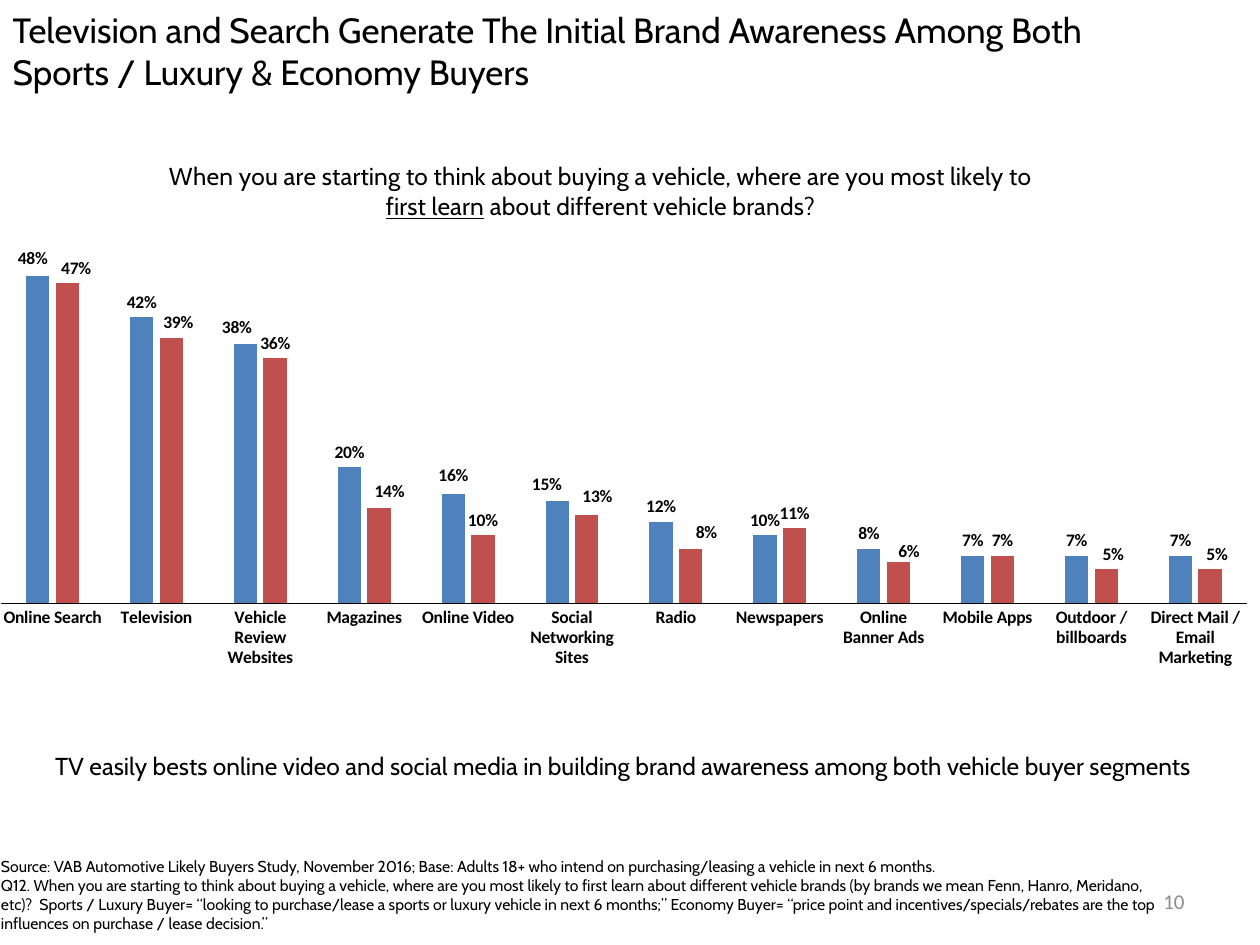
import pptx
import pptx.chart.data
import pptx.dml.color
import pptx.enum.chart
import pptx.enum.text
import pptx.oxml
import pptx.oxml.ns
import pptx.util

Pt = pptx.util.Pt
ALIGN = pptx.enum.text.PP_ALIGN
ANCHOR = pptx.enum.text.MSO_ANCHOR
COLORS = {"text": "000000", "number": "8C8C8C", "luxury": "4F81BD", "economy": "C0504D"}

CATEGORIES = ["Online Search", "Television", "Vehicle Review Websites", "Magazines",
              "Online Video", "Social Networking Sites", "Radio", "Newspapers",
              "Online Banner Ads", "Mobile Apps", "Outdoor / billboards",
              "Direct Mail / Email Marketing"]
LUXURY = [0.48, 0.42, 0.38, 0.20, 0.16, 0.15, 0.12, 0.10, 0.08, 0.07, 0.07, 0.07]
ECONOMY = [0.47, 0.39, 0.36, 0.14, 0.10, 0.13, 0.08, 0.11, 0.06, 0.07, 0.05, 0.05]

# Shifts of single value labels in points: point index -> (right, down)
LUXURY_SHIFTS = {0: (-3, -2), 2: (-5, -1), 4: (0, -2), 5: (-6, -1)}
ECONOMY_SHIFTS = {0: (5, 0), 1: (4, 0), 3: (6, -1), 5: (6, -2), 6: (9, -1),
                  8: (6, 2), 10: (4, 0), 11: (4, 0)}
CHART_WIDTH, CHART_HEIGHT = 723.6, 377.3


def rgb(name):
    return pptx.dml.color.RGBColor.from_string(COLORS[name])


def style_font(font, size, name="Cabin", color="text", bold=False):
    font.size = Pt(size)
    font.name = name
    font.bold = bold
    font.color.rgb = rgb(color)


def add_span(para, text, size, name="Cabin", color="text"):
    span = para.add_run()
    span.text = text
    style_font(span.font, size, name, color)
    return span


def add_text(page, place, lines, size, align=ALIGN.LEFT, name="Cabin", color="text",
             anchor=ANCHOR.TOP, wrap=True):
    box = page.shapes.add_textbox(*map(Pt, place))
    frame = box.text_frame
    frame.word_wrap = wrap
    frame.vertical_anchor = anchor
    para = frame.paragraphs[0]
    para.alignment = align
    for number, line in enumerate(lines):
        if number:
            para.add_line_break()
        add_span(para, line, size, name, color)


def add_title(page, text):
    title = page.shapes.title
    title.left, title.top, title.width, title.height = map(Pt, (0, 1.4, 648, 42.5))
    frame = title.text_frame
    frame.word_wrap = True
    frame.auto_size = pptx.enum.text.MSO_AUTO_SIZE.NONE
    frame.vertical_anchor = ANCHOR.TOP
    para = frame.paragraphs[0]
    para.alignment = ALIGN.LEFT
    add_span(para, text, 20)


def set_layout(parent, index, **values):
    """Give a chart part a manual layout, placed at the index the schema asks for."""
    for old in parent.findall(pptx.oxml.ns.qn("c:layout")):
        parent.remove(old)
    fields = "".join(f'<c:{key} val="{value}"/>' for key, value in values.items())
    parent.insert(index, pptx.oxml.parse_xml(
        f'<c:layout {pptx.oxml.ns.nsdecls("c")}><c:manualLayout>{fields}'
        '</c:manualLayout></c:layout>'))


def add_question(chart):
    chart.has_title = True
    frame = chart.chart_title.text_frame
    first = frame.paragraphs[0]
    add_span(first, "When you are starting to think about buying a vehicle, "
                    "where are you most likely to", 14)
    second = frame.add_paragraph()
    add_span(second, "first learn", 14).font.underline = True
    add_span(second, " about different vehicle brands?", 14)
    for para in (first, second):
        para.alignment = ALIGN.CENTER
    set_layout(chart.chart_title._element, 1, xMode="edge", yMode="edge", x=0.13, y=0.07)


def style_series(series, color, shifts):
    series.format.fill.solid()
    series.format.fill.fore_color.rgb = rgb(color)
    outside = pptx.enum.chart.XL_LABEL_POSITION.OUTSIDE_END
    labels = series.data_labels
    labels.show_value = True
    labels.number_format = "0%"
    labels.number_format_is_linked = False
    labels.position = outside
    style_font(labels.font, 10, "Calibri", bold=True)
    for index in shifts:
        label = series.points[index].data_label
        style_font(label.font, 10, "Calibri", bold=True)
        label.position = outside
    shifted = labels._element.findall(pptx.oxml.ns.qn("c:dLbl"))
    for element, (right, down) in zip(shifted, shifts.values()):
        set_layout(element, 1, x=round(right / CHART_WIDTH, 4),
                   y=round(down / CHART_HEIGHT, 4))
        element.insert(2, pptx.oxml.parse_xml(
            f'<c:numFmt {pptx.oxml.ns.nsdecls("c")} formatCode="0%" sourceLinked="0"/>'))


def add_awareness_chart(page):
    data = pptx.chart.data.CategoryChartData(number_format="0%")
    data.categories = CATEGORIES
    data.add_series("Sports / Luxury Buyer", LUXURY)
    data.add_series("Economy Buyer", ECONOMY)
    chart = page.shapes.add_chart(
        pptx.enum.chart.XL_CHART_TYPE.COLUMN_CLUSTERED,
        *map(Pt, (0, 62.6, CHART_WIDTH, CHART_HEIGHT)), data).chart
    style_font(chart.font, 10, "Calibri")
    chart.has_legend = False
    add_question(chart)

    # Bars and their labels
    plot = chart.plots[0]
    plot.gap_width = 219
    plot.overlap = -27
    plot.vary_by_categories = False
    style_series(plot.series[0], "luxury", LUXURY_SHIFTS)
    style_series(plot.series[1], "economy", ECONOMY_SHIFTS)

    # Axes
    values = chart.value_axis
    values.minimum_scale, values.maximum_scale = 0, 0.6
    values.has_major_gridlines = False
    values.visible = False
    groups = chart.category_axis
    groups.major_tick_mark = pptx.enum.chart.XL_TICK_MARK.NONE
    groups.format.line.color.rgb = rgb("text")
    groups.format.line.width = Pt(0.75)
    style_font(groups.tick_labels.font, 10, "Calibri", bold=True)
    plot_area = chart._chartSpace.chart.plotArea
    set_layout(plot_area, 0, layoutTarget="inner", xMode="edge", yMode="edge",
               x=0, y=0.129, w=0.985, h=0.619)


def main():
    deck = pptx.Presentation()
    deck.slide_width, deck.slide_height = Pt(720), Pt(540)
    page = deck.slides.add_slide(deck.slide_layouts[5])

    add_title(page, "Television and Search Generate The Initial Brand Awareness Among Both "
                    "Sports / Luxury & Economy Buyers")
    add_awareness_chart(page)

    # Source note
    add_text(page, (-6.5, 486, 673, 51), [
        "Source: VAB Automotive Likely Buyers Study, November 2016; Base: Adults 18+ who "
        "intend on purchasing/leasing a vehicle in next 6 months.",
        "Q12. When you are starting to think about buying a vehicle, where are you most "
        "likely to first learn about different vehicle brands (by brands we mean Fenn, "
        "Hanro, Meridano, etc)?  Sports / Luxury Buyer= “looking to purchase/lease a sports "
        "or luxury vehicle in next 6 months;” Economy Buyer= “price point and "
        "incentives/specials/rebates are the top influences on purchase / lease decision.”",
    ], 9)

    # Takeaway and page number
    add_text(page, (2, 425.5, 708.5, 24.5),
             ["TV easily bests online video and social media in building brand awareness "
              "among both vehicle buyer segments"], 14, ALIGN.CENTER, wrap=False)
    add_text(page, (516, 500.4, 168, 28.8), ["10"], 12, ALIGN.RIGHT, "Calibri", "number",
             ANCHOR.MIDDLE)

    deck.save("out.pptx")


if __name__ == "__main__":
    main()
